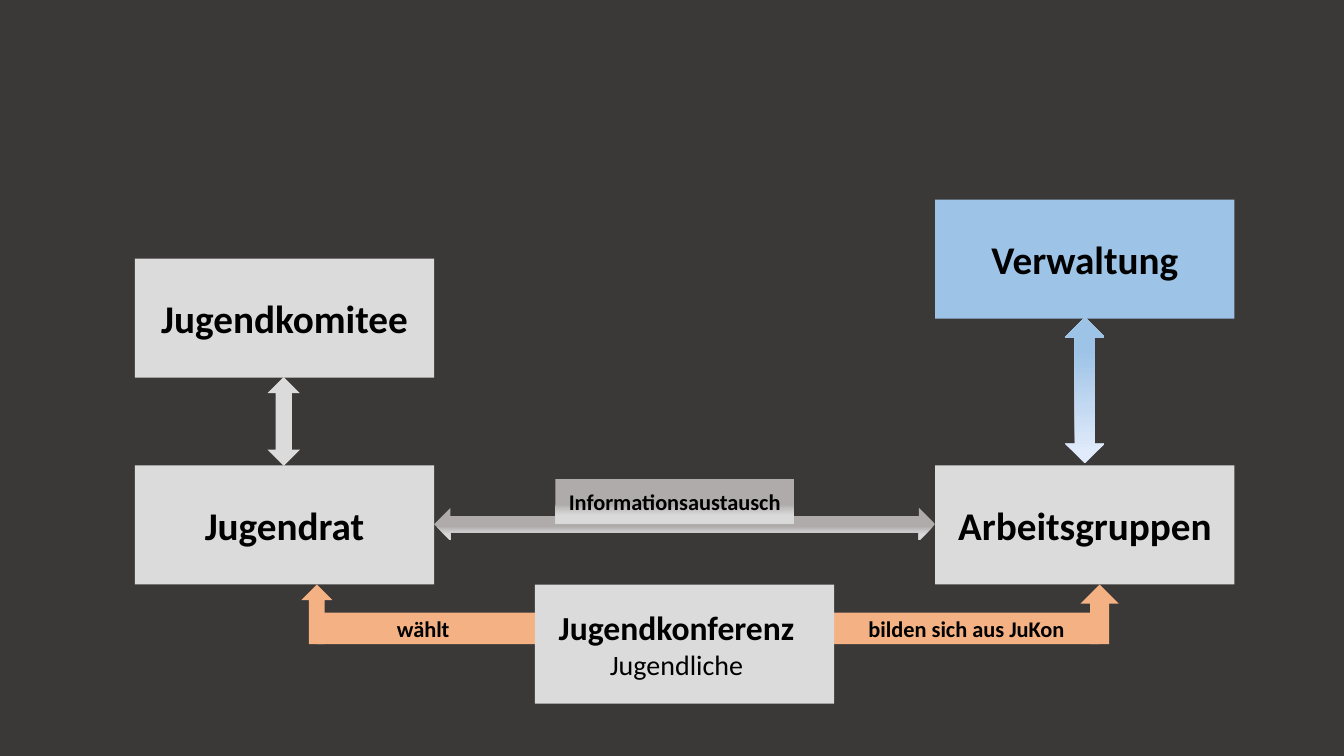
from pptx import Presentation
from pptx.dml.color import RGBColor
from pptx.enum import shapes, text
from pptx.util import Cm, Pt

KIND = shapes.MSO_SHAPE
GREY, BLUE, PEACH = "DBDBDB", "9DC3E6", "F4B183"
WIDE, HIGH = 7.54, 3.0
LEFT, MID, RIGHT = 3.4, 13.48, 23.57
ROW, BASE = 11.73, 14.73


def tint(code):
    """Turn a hex string into a colour."""
    return RGBColor.from_string(code)


def paint(fill, look):
    """Fill with one colour, or with (stops, angle) as a gradient."""
    if isinstance(look, str):
        fill.solid()
        fill.fore_color.rgb = tint(look)
        return
    stops, angle = look
    fill.gradient()
    fill.gradient_angle = angle
    for stop, (place, code) in zip(fill.gradient_stops, stops):
        stop.position = place
        stop.color.rgb = tint(code)


def draw(slide, kind, at, look):
    """Add a borderless shape at left, top, width, height in cm."""
    shape = slide.shapes.add_shape(kind, *map(Cm, at))
    shape.shadow.inherit = False
    shape.line.fill.background()
    paint(shape.fill, look)
    return shape


def write(par, words, size, bold=True):
    """Write one centred line of text."""
    par.alignment = text.PP_ALIGN.CENTER
    run = par.add_run()
    run.text = words
    style = {"name": "Calibri", "size": Pt(size), "bold": bold}
    for key, value in style.items():
        setattr(run.font, key, value)
    run.font.color.rgb = tint("000000")


def label(slide, at, look, words, size):
    """Add a rectangle with bold text and return its text frame."""
    frame = draw(slide, KIND.RECTANGLE, at, look).text_frame
    form = {"word_wrap": True, "vertical_anchor": text.MSO_ANCHOR.MIDDLE}
    for key, value in form.items():
        setattr(frame, key, value)
    write(frame.paragraphs[0], words, size)
    return frame


def body(slide, left, top, words, look=GREY, size=28):
    """Add one of the equal boxes for a council body."""
    return label(slide, (left, top, WIDE, HIGH), look, words, size)


def main():
    """Build the slide and save it."""
    deck = Presentation()
    deck.slide_width, deck.slide_height = Cm(33.87), Cm(19.05)
    slide = deck.slides.add_slide(deck.slide_layouts[6])
    paint(slide.background.fill, "3B3838")

    label(slide, (7.98, 15.44, 5.5, 0.79), PEACH, "wählt ", 16)
    draw(slide, KIND.UP_ARROW, (7.59, BASE, 0.79, 1.5), PEACH)
    label(slide, (21.01, 15.44, 6.7, 0.79), PEACH, "bilden sich aus JuKon", 16)
    draw(slide, KIND.UP_ARROW, (27.23, BASE, 0.96, 1.5), PEACH)

    youth = body(slide, MID, BASE, "Jugendkonferenz", size=24)
    youth.paragraphs[0]._p.get_or_add_pPr().set("marR", str(Cm(0.4)))
    write(youth.add_paragraph(), "Jugendliche", 20, False)
    body(slide, LEFT, ROW, "Jugendrat")
    body(slide, RIGHT, ROW, "Arbeitsgruppen")

    steel = ((0.56, "AFABAB"), (0.81, "D9D9D9")), 270
    draw(slide, KIND.LEFT_RIGHT_ARROW, (10.94, 12.8, 12.63, 0.82), steel)
    label(slide, (14, 12.07, 6.01, 1.13), steel, "Informationsaustausch", 16)

    body(slide, RIGHT, 5.03, "Verwaltung", BLUE)
    sky = ((0.07, "E1EBFB"), (0.78, BLUE)), 90
    draw(slide, KIND.UP_DOWN_ARROW, (26.84, 8.0, 1.0, 3.68), sky)
    body(slide, LEFT, 6.52, "Jugendkomitee")
    draw(slide, KIND.UP_DOWN_ARROW, (6.74, 9.5, 0.82, 2.24), GREY)
    deck.save("out.pptx")


if __name__ == "__main__":
    main()
